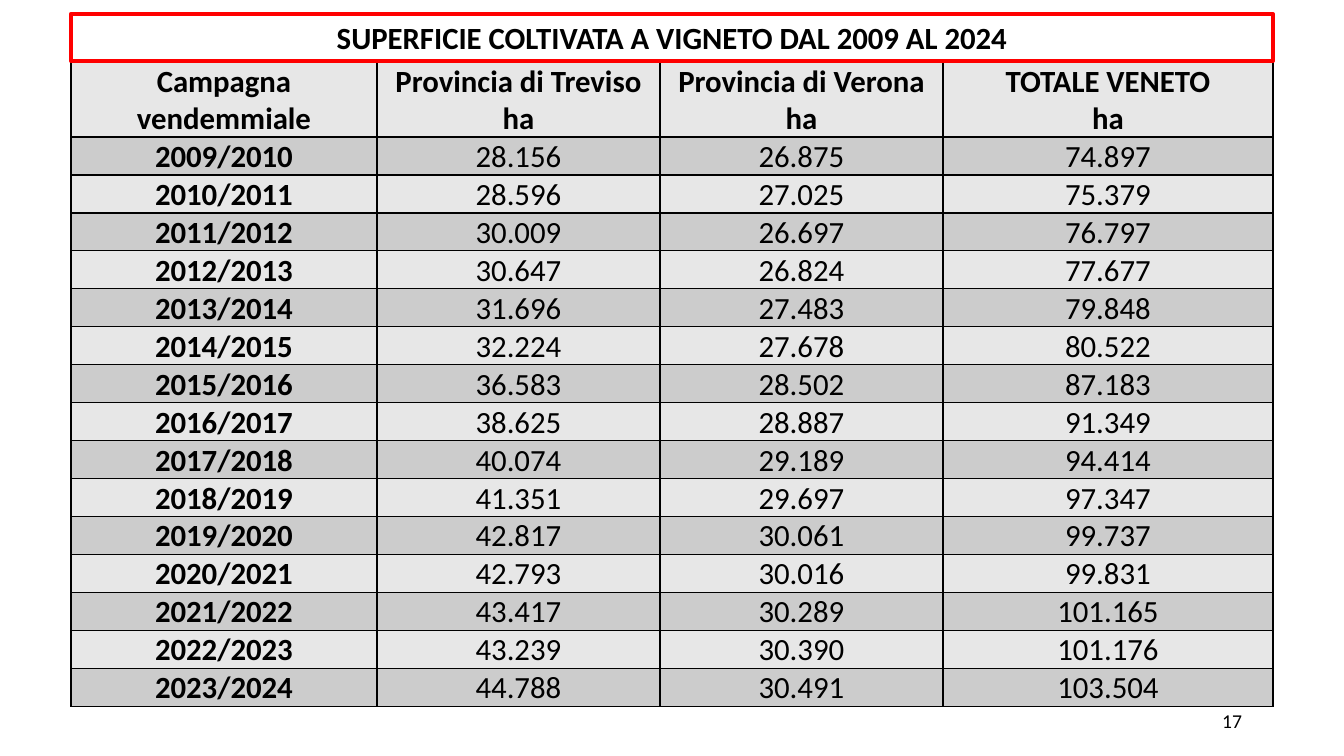
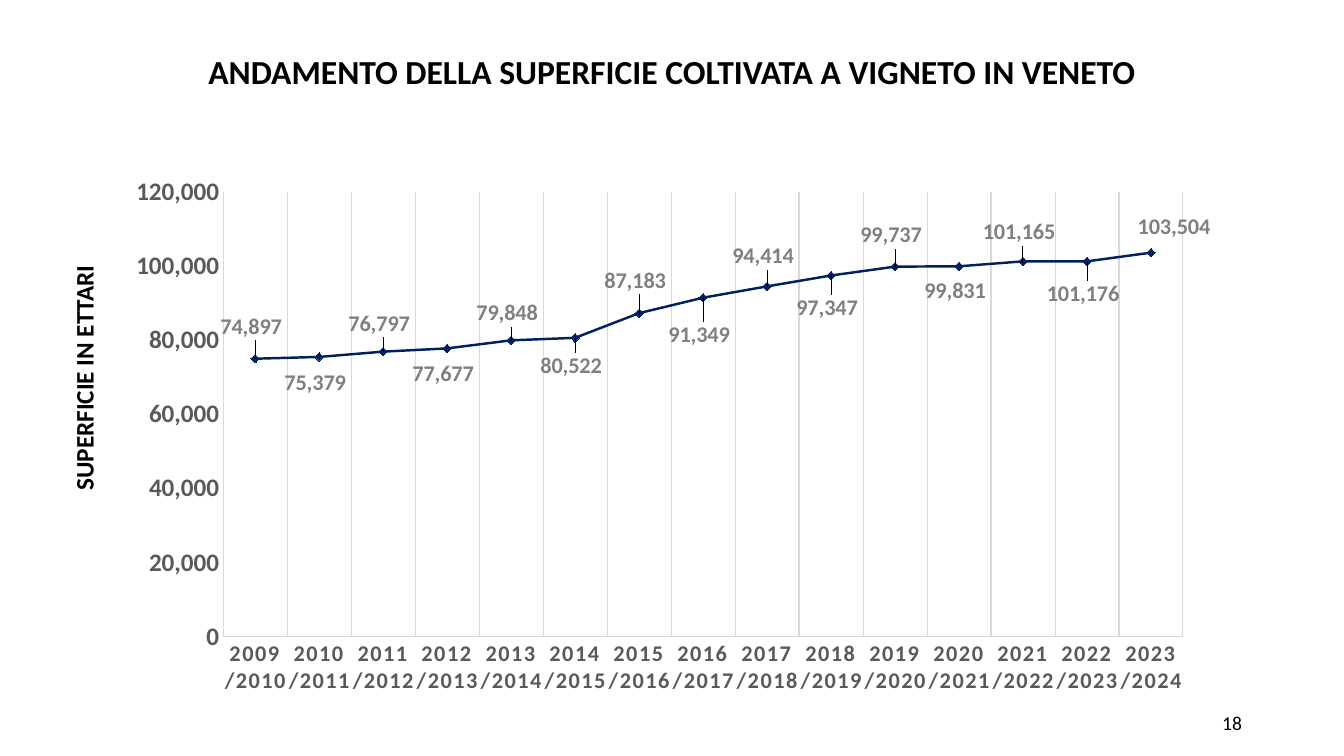
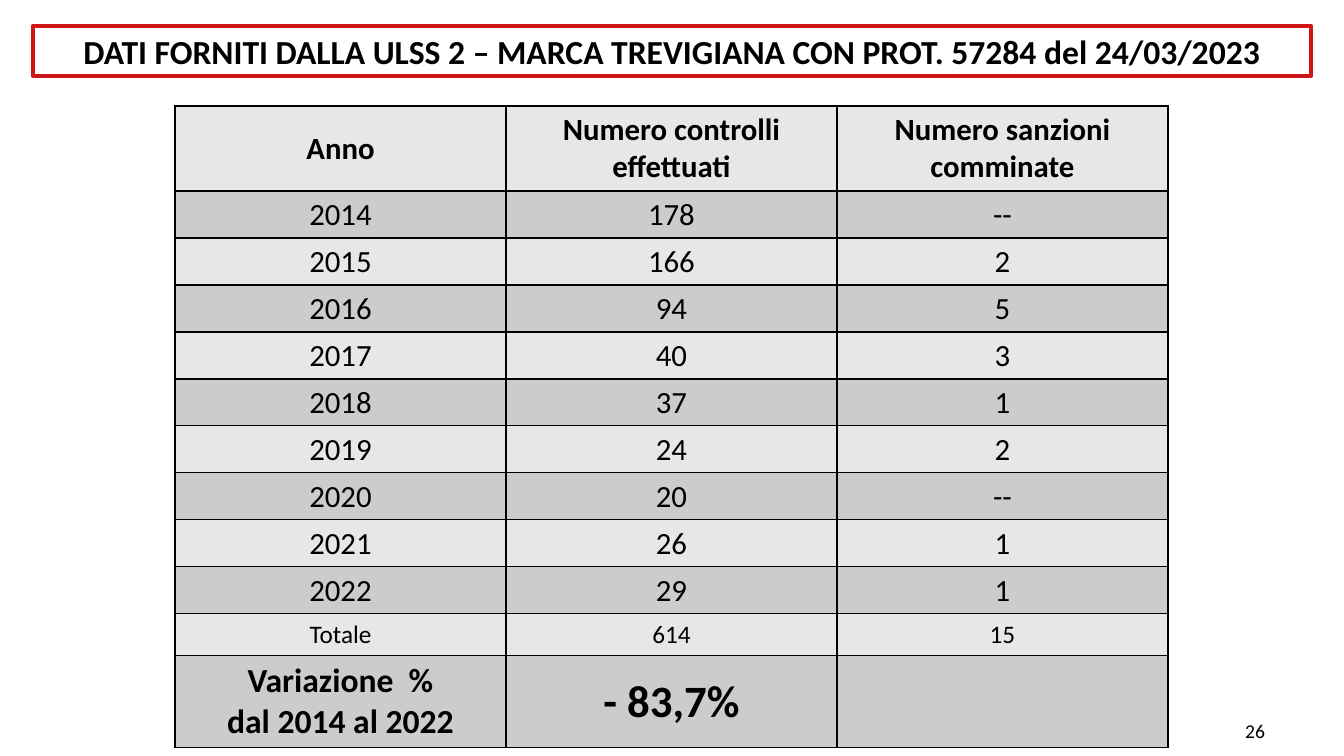
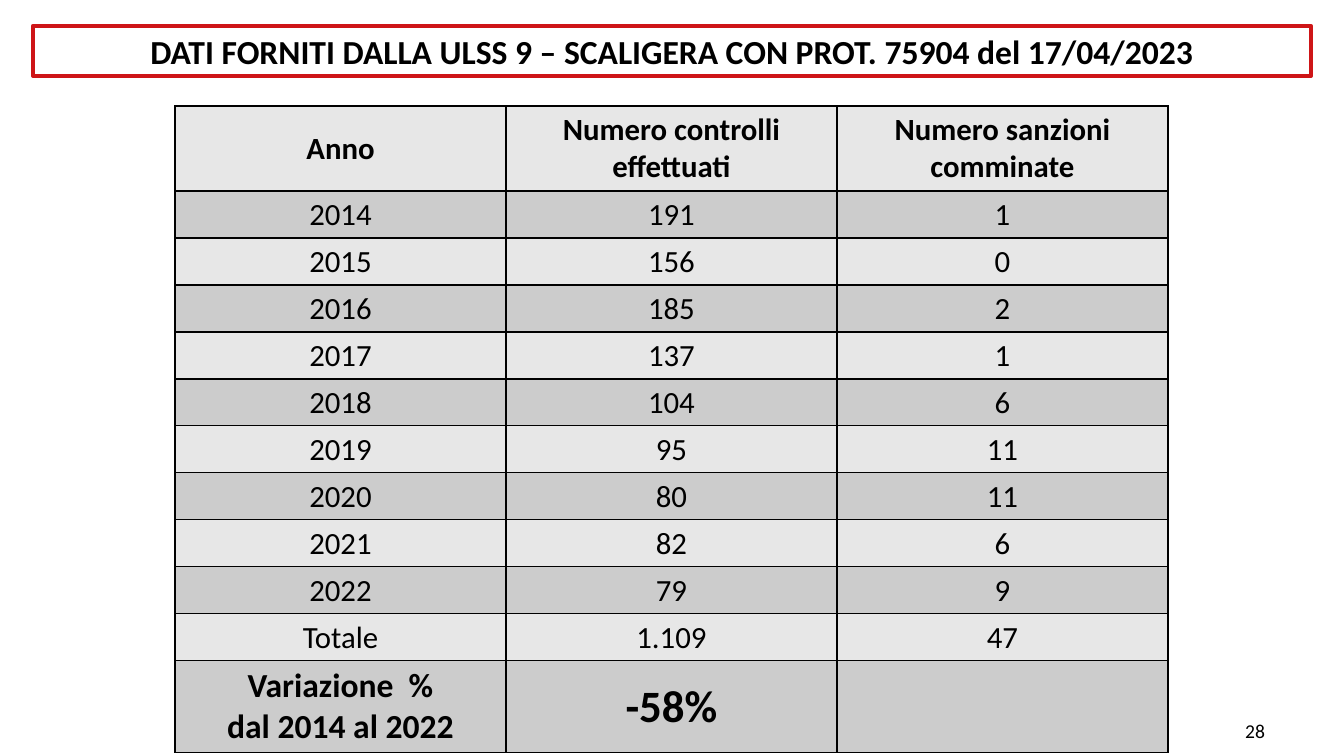
from dataclasses import dataclass

from pptx import Presentation
from pptx.chart.data import CategoryChartData
from pptx.dml.color import RGBColor
from pptx.enum.chart import XL_CHART_TYPE, XL_LABEL_POSITION, XL_MARKER_STYLE, XL_TICK_MARK
from pptx.enum.text import MSO_ANCHOR, MSO_AUTO_SIZE, PP_ALIGN
from pptx.oxml import parse_xml
from pptx.oxml.ns import nsdecls
from pptx.util import Emu, Pt


@dataclass(frozen=True)
class Theme:
    font: str = "Calibri"
    black: RGBColor = RGBColor(0x00, 0x00, 0x00)
    white: RGBColor = RGBColor(0xFF, 0xFF, 0xFF)
    red: RGBColor = RGBColor(0xFF, 0x00, 0x00)
    dark_red: RGBColor = RGBColor(0xCE, 0x15, 0x17)
    light_row: RGBColor = RGBColor(0xE7, 0xE7, 0xE7)
    dark_row: RGBColor = RGBColor(0xCC, 0xCC, 0xCC)
    grid: RGBColor = RGBColor(0xD9, 0xD9, 0xD9)
    axis_text: RGBColor = RGBColor(0x59, 0x59, 0x59)
    label_text: RGBColor = RGBColor(0x80, 0x80, 0x80)
    navy: RGBColor = RGBColor(0x00, 0x20, 0x60)
    blue: RGBColor = RGBColor(0x44, 0x72, 0xC4)
    number: int = 14
    small: int = 16
    medium: int = 18
    body: int = 22
    heading: int = 24
    highlight: int = 32


THEME = Theme()
SLIDE_WIDTH, SLIDE_HEIGHT = 1344, 756
SCALE = 12192000 / SLIDE_WIDTH


def px(*lengths):
    """Turn px lengths into a list of EMU."""
    return [Emu(round(length * SCALE)) for length in lengths]


def write(frame, text, size, bold=False, align=PP_ALIGN.CENTER):
    """Fill a text frame with one paragraph per line of text."""
    frame.word_wrap = True
    frame.vertical_anchor = MSO_ANCHOR.MIDDLE
    for index, line in enumerate(text.split("\n")):
        para = frame.add_paragraph() if index else frame.paragraphs[0]
        para.alignment = align
        span = para.add_run()
        span.text = line
        span.font.name = THEME.font
        span.font.size = Pt(size)
        span.font.bold = bold
        span.font.color.rgb = THEME.black


deck = Presentation()
deck.slide_width, deck.slide_height = px(SLIDE_WIDTH, SLIDE_HEIGHT)

# Titles and page numbers
ULSS_TITLE_BOX = (33, 26, 1278, 50)
ULSS_NUMBER_AT = (973, 711)
page_plan = [
    ("SUPERFICIE COLTIVATA A VIGNETO DAL 2009 AL 2024",
     (71, 14, 1202, 47), THEME.body, THEME.red, "17", (950, 701)),
    ("ANDAMENTO DELLA SUPERFICIE COLTIVATA A VIGNETO IN VENETO",
     (171, 46, 1002, 50), THEME.heading, None, "18", (950, 703)),
    ("DATI FORNITI DALLA ULSS 2 – MARCA TREVIGIANA CON PROT. 57284 del 24/03/2023",
     ULSS_TITLE_BOX, THEME.heading, THEME.dark_red, "26", ULSS_NUMBER_AT),
    ("DATI FORNITI DALLA ULSS 9 – SCALIGERA CON PROT. 75904 del 17/04/2023",
     ULSS_TITLE_BOX, THEME.heading, THEME.dark_red, "28", ULSS_NUMBER_AT),
]
pages = []
for heading, title_box, size, outline, number, number_at in page_plan:
    page = deck.slides.add_slide(deck.slide_layouts[5])
    title = page.shapes.title
    title.left, title.top, title.width, title.height = px(*title_box)
    title.text_frame.auto_size = MSO_AUTO_SIZE.NONE
    write(title.text_frame, heading, size, bold=True)
    if outline:
        title.line.color.rgb = outline
        title.line.width = Pt(3)
    number_box = page.shapes.add_textbox(*px(*number_at, 302, 40))
    write(number_box.text_frame, number, THEME.number, align=PP_ALIGN.RIGHT)
    pages.append(page)
area_page, trend_page, treviso_page, verona_page = pages

# Vineyard area in hectares: Treviso, Verona, whole Veneto
vineyard_area = {
    "2009/2010": (28156, 26875, 74897),
    "2010/2011": (28596, 27025, 75379),
    "2011/2012": (30009, 26697, 76797),
    "2012/2013": (30647, 26824, 77677),
    "2013/2014": (31696, 27483, 79848),
    "2014/2015": (32224, 27678, 80522),
    "2015/2016": (36583, 28502, 87183),
    "2016/2017": (38625, 28887, 91349),
    "2017/2018": (40074, 29189, 94414),
    "2018/2019": (41351, 29697, 97347),
    "2019/2020": (42817, 30061, 99737),
    "2020/2021": (42793, 30016, 99831),
    "2021/2022": (43417, 30289, 101165),
    "2022/2023": (43239, 30390, 101176),
    "2023/2024": (44788, 30491, 103504),
}
area_rows = [("Campagna vendemmiale", "Provincia di Treviso\nha",
              "Provincia di Verona\nha", "TOTALE VENETO\nha")]
for season, areas in vineyard_area.items():
    area_rows.append((season, *(f"{area:,}".replace(",", ".") for area in areas)))

# Yearly checks and fines
years = [str(year) for year in range(2014, 2023)]
checks_header = ("Anno", "Numero controlli\neffettuati", "Numero sanzioni\ncomminate")
variation = "Variazione  %\ndal 2014 al 2022"
treviso_rows = [
    checks_header,
    *zip(years, "178 166 94 40 37 24 20 26 29".split(), "-- 2 5 3 1 2 -- 1 1".split()),
    ("Totale", "614", "15"),
    (variation, "- 83,7%", ""),
]
verona_rows = [
    checks_header,
    *zip(years, "191 156 185 137 104 95 80 82 79".split(), "1 0 2 1 6 11 11 6 9".split()),
    ("Totale", "1.109", "47"),
    (variation, "-58%", ""),
]

# Tables
checks_columns = [331] * 3
checks_heights = [85] + [47] * 9 + [42, 92]
checks_sizes = {(11, 0): THEME.heading, (11, 1): THEME.highlight}
treviso_sizes = checks_sizes | {(10, column): THEME.medium for column in range(3)}
area_bold = {(row, 0) for row in range(len(area_rows))}
table_plan = [
    (area_page, area_rows, (71, 62), [306, 283, 283, 330], [75] + [38] * 15,
     {}, area_bold, (1, 1, 1, 0)),
    (treviso_page, treviso_rows, (175, 106), checks_columns, checks_heights,
     treviso_sizes, set(checks_sizes), (10, 5, 10, 5)),
    (verona_page, verona_rows, (175, 106), checks_columns, checks_heights,
     checks_sizes, set(checks_sizes), (10, 5, 10, 5)),
]
for page, rows, corner, widths, heights, sizes, bold_cells, margins in table_plan:
    table = page.shapes.add_table(
        len(rows), len(widths), *px(*corner, sum(widths), sum(heights))).table
    table.first_row = table.horz_banding = False
    for column, width in zip(table.columns, px(*widths)):
        column.width = width
    for row, height in zip(table.rows, px(*heights)):
        row.height = height
    for row_index, values in enumerate(rows):
        for column_index, value in enumerate(values):
            place = (row_index, column_index)
            cell = table.cell(*place)
            (cell.margin_left, cell.margin_top,
             cell.margin_right, cell.margin_bottom) = px(*margins)
            for side in ("lnL", "lnR", "lnT", "lnB"):
                cell._tc.get_or_add_tcPr().append(parse_xml(
                    f'<a:{side} {nsdecls("a")} w="12700"><a:solidFill>'
                    f'<a:srgbClr val="{THEME.black}"/></a:solidFill></a:{side}>'))
            cell.fill.solid()
            cell.fill.fore_color.rgb = THEME.dark_row if row_index % 2 else THEME.light_row
            cell.vertical_anchor = MSO_ANCHOR.MIDDLE
            if value:
                write(cell.text_frame, value, sizes.get(place, THEME.body),
                      bold=row_index == 0 or place in bold_cells)
    # The title outline lies over the top edge of the table
    page.shapes.element.append(page.shapes.title.element)

# Trend chart
CHART_WIDTH, CHART_HEIGHT = 1077, 656
chart_data = CategoryChartData(number_format="#,##0")
chart_data.categories = list(vineyard_area)
chart_data.add_series("Series 1", [areas[2] for areas in vineyard_area.values()])
chart = trend_page.shapes.add_chart(
    XL_CHART_TYPE.LINE_MARKERS, *px(134, 86, CHART_WIDTH, CHART_HEIGHT), chart_data).chart
chart.has_legend = False
chart.has_title = False
chart.font.name = THEME.font
chart.font.size = Pt(10)

season_axis, area_axis = chart.category_axis, chart.value_axis
area_axis.minimum_scale, area_axis.maximum_scale, area_axis.major_unit = 0, 120000, 20000
area_axis.has_major_gridlines = False
area_axis.tick_labels.number_format = "#,##0"
area_axis.tick_labels.number_format_is_linked = False
season_axis.has_major_gridlines = True
for line in (season_axis.format.line, area_axis.format.line,
             season_axis.major_gridlines.format.line):
    line.color.rgb = THEME.grid
    line.width = Pt(0.75)
for axis in (season_axis, area_axis):
    axis.major_tick_mark = axis.minor_tick_mark = XL_TICK_MARK.NONE

series = chart.plots[0].series[0]
series.smooth = False
series.format.line.color.rgb = THEME.navy
series.format.line.width = Pt(1.75)
series.marker.style = XL_MARKER_STYLE.DIAMOND
series.marker.size = 6
series.marker.format.fill.solid()
series.marker.format.fill.fore_color.rgb = THEME.blue
series.marker.format.line.color.rgb = THEME.navy

labels = series.data_labels
labels.show_value = True
labels.number_format = "#,##0"
labels.number_format_is_linked = False
labels.position = XL_LABEL_POSITION.CENTER
point_labels = [series.points[index].data_label for index in range(len(vineyard_area))]
for point_label in point_labels:
    point_label.position = XL_LABEL_POSITION.CENTER

chart_fonts = [(season_axis.tick_labels.font, THEME.small, THEME.axis_text),
               (area_axis.tick_labels.font, THEME.medium, THEME.axis_text)]
for label in (labels, *point_labels):
    chart_fonts.append((label.font, THEME.small, THEME.label_text))
for font, size, color in chart_fonts:
    font.name = THEME.font
    font.size = Pt(size)
    font.bold = True
    font.color.rgb = color
season_axis._element.xpath(".//a:defRPr")[0].set("spc", "120")

# Labels stand by turns above and below the line
label_rises = [-32, 26, -28, 26, -27, 28, -32, 37, -30, 33, -31, 25, -29, 33, -26]
label_shifts = [-4] * 14 + [23]
label_elements = series._element.xpath("c:dLbls/c:dLbl")
for element, shift, rise in zip(label_elements, label_shifts, label_rises):
    element[0].addnext(parse_xml(
        f'<c:layout {nsdecls("c")}><c:manualLayout>'
        f'<c:x val="{shift / CHART_WIDTH:.4f}"/><c:y val="{rise / CHART_HEIGHT:.4f}"/>'
        f'</c:manualLayout></c:layout>'))

plot_area = chart._chartSpace.xpath("c:chart/c:plotArea")[0]
for layout in plot_area.xpath("c:layout"):
    plot_area.remove(layout)
plot_area.insert(0, parse_xml(
    f'<c:layout {nsdecls("c")}><c:manualLayout><c:layoutTarget val="inner"/>'
    '<c:xMode val="edge"/><c:yMode val="edge"/><c:x val="0.083"/><c:y val="0.161"/>'
    '<c:w val="0.894"/><c:h val="0.678"/></c:manualLayout></c:layout>'))

axis_caption = trend_page.shapes.add_textbox(*px(-84, 358, 335, 40))
axis_caption.rotation = 270
write(axis_caption.text_frame, "SUPERFICIE IN ETTARI", THEME.medium, bold=True)

deck.save("out.pptx")
